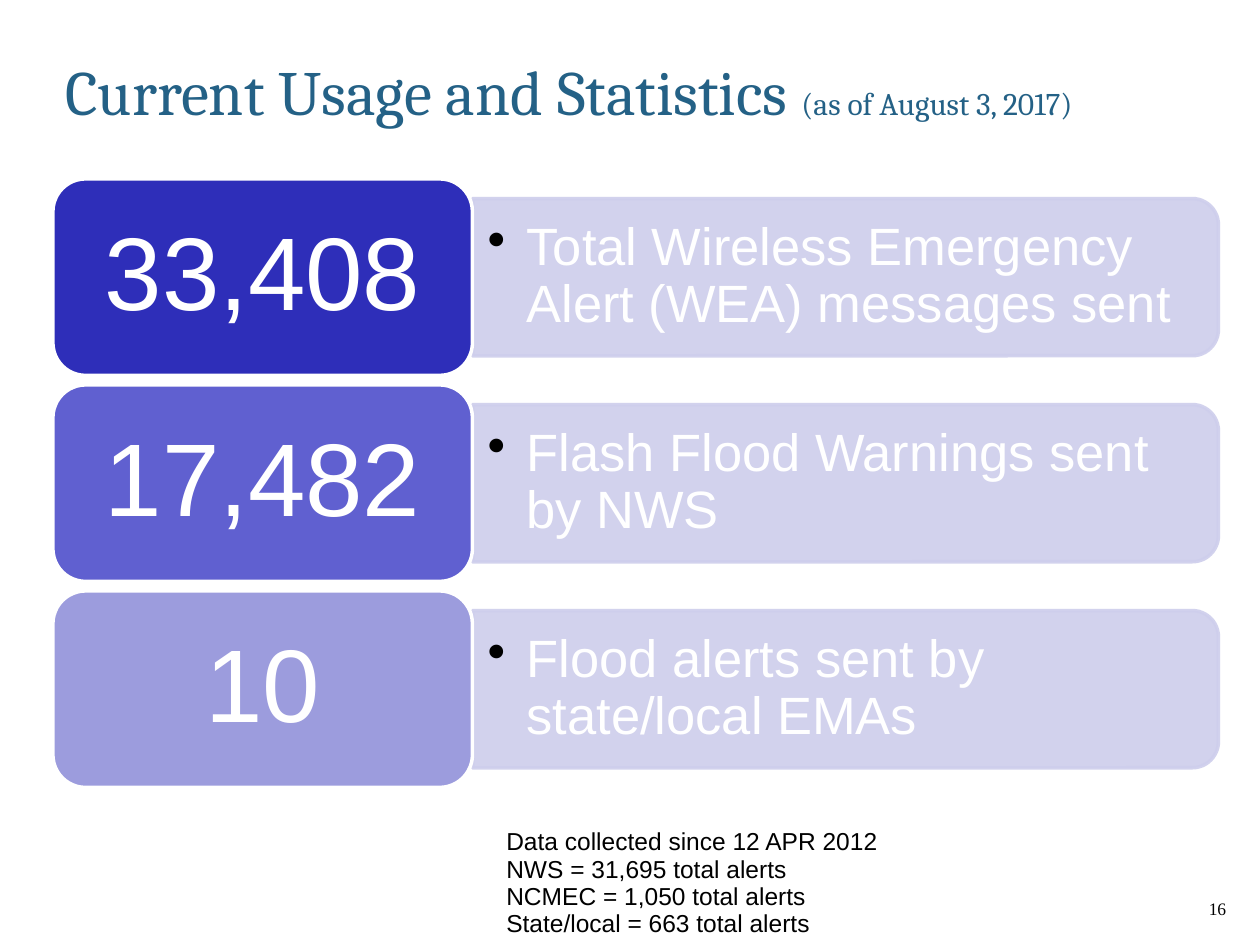
from lxml import etree
from pptx import Presentation
from pptx.dml.color import RGBColor
from pptx.enum import shapes, text
from pptx.oxml.ns import qn
from pptx.util import Inches, Pt

WHITE = RGBColor(0xFF, 0xFF, 0xFF)
BLACK = RGBColor(0, 0, 0)
TITLE_BLUE = RGBColor(0x24, 0x61, 0x86)
PALE_LILAC = RGBColor(0xCE, 0xCE, 0xEC)
STATISTICS = [
    ("33,408", "Total Wireless Emergency Alert (WEA) messages sent",
     RGBColor(0x2E, 0x2E, 0xB9)),
    ("17,482", "Flash Flood Warnings sent by NWS", RGBColor(0x60, 0x60, 0xD0)),
    ("10", "Flood alerts sent by state/local EMAs", RGBColor(0x9C, 0x9C, 0xDD)),
]
SOURCE_LINES = [
    "Data collected since 12 APR 2012",
    "NWS = 31,695 total alerts",
    "NCMEC = 1,050 total alerts",
    "State/local = 663 total alerts",
]


def style(run, size, color, face="Arial"):
    run.font.size = Pt(size)
    run.font.name = face
    run.font.color.rgb = color


def set_frame(frame, side, edge, anchor=text.MSO_ANCHOR.MIDDLE):
    frame.word_wrap = True
    frame.vertical_anchor = anchor
    frame.margin_left = frame.margin_right = Inches(side)
    frame.margin_top = frame.margin_bottom = Inches(edge)


def add_panel(slide, preset, box, fill):
    panel = slide.shapes.add_shape(preset, *box)
    panel.shadow.inherit = False
    panel.fill.solid()
    panel.fill.fore_color.rgb = fill
    panel.line.width = Pt(2)
    return panel


def add_bullet(paragraph, indent):
    props = paragraph._p.get_or_add_pPr()
    props.set("marL", str(indent))
    props.set("indent", str(-indent))
    color = etree.SubElement(props, qn("a:buClr"))
    etree.SubElement(color, qn("a:srgbClr"), val=str(BLACK))
    etree.SubElement(props, qn("a:buChar"), char="•")


def add_title(slide, left, top, width, height):
    title = slide.shapes.title
    title.left, title.top, title.width, title.height = left, top, width, height
    frame = title.text_frame
    set_frame(frame, 0.1, 0.05)
    frame.auto_size = text.MSO_AUTO_SIZE.NONE
    heading = frame.paragraphs[0]
    heading.alignment = text.PP_ALIGN.LEFT
    heading.line_spacing = 0.95
    for words, size in (("Current Usage and Statistics ", 36),
                        ("(as of August 3, 2017)", 18)):
        run = heading.add_run()
        run.text = words
        style(run, size, TITLE_BLUE, "Cambria")


def add_statistic(slide, left, top, width, height, number, meaning, color):
    number_width = Inches(3.33)
    bar_left, bar_width = left + number_width, width - number_width
    bar_height = int(height * 0.8)
    middle = top + height // 2

    # Bar with rounded right end: an upright shape turned a quarter
    upright = (bar_left + (bar_width - bar_height) // 2, middle - bar_width // 2,
               bar_height, bar_width)
    bar = add_panel(slide, shapes.MSO_SHAPE.ROUND_2_SAME_RECTANGLE, upright, PALE_LILAC)
    bar.rotation = 90
    bar.line.color.rgb = PALE_LILAC
    for tint in bar._element.spPr.iter(qn("a:srgbClr")):
        etree.SubElement(tint, qn("a:alpha"), val="90000")

    # Meaning, laid level over the bar
    label_height = Inches(1.12)
    label = slide.shapes.add_textbox(bar_left, middle - label_height // 2,
                                     bar_width - Inches(0.06), label_height)
    set_frame(label.text_frame, 0.12, 0.06)
    line = label.text_frame.paragraphs[0]
    line.text = meaning
    line.level = 1
    line.line_spacing = 0.9
    add_bullet(line, Inches(0.31))
    style(line.runs[0], 30, WHITE)

    # Number
    badge = add_panel(slide, shapes.MSO_SHAPE.ROUNDED_RECTANGLE,
                      (left, top, number_width, height), color)
    badge.line.color.rgb = WHITE
    set_frame(badge.text_frame, 0.25, 0.12)
    figure = badge.text_frame.paragraphs[0]
    figure.text = number
    figure.alignment = text.PP_ALIGN.CENTER
    figure.line_spacing = 0.9
    style(figure.runs[0], 59, WHITE)


def add_statistics(slide, left, top, width, height):
    row_height = Inches(1.56)
    pitch = (height - row_height) // (len(STATISTICS) - 1)
    for index, statistic in enumerate(STATISTICS):
        add_statistic(slide, left, top + index * pitch, width, row_height, *statistic)


def add_sources(slide, left, top, width, height):
    sources = slide.shapes.add_textbox(left, top, width, height)
    sources.fill.solid()
    sources.fill.fore_color.rgb = WHITE
    frame = sources.text_frame
    set_frame(frame, 0.1, 0.05, text.MSO_ANCHOR.TOP)
    frame.text = "\n".join(SOURCE_LINES)
    for line in frame.paragraphs:
        line.line_spacing = 0.93
        style(line.runs[0], 14, BLACK)


def add_page_number(slide, left, top, width, height):
    page = slide.shapes.add_textbox(left, top, width, height)
    set_frame(page.text_frame, 0.1, 0.05, text.MSO_ANCHOR.TOP)
    number = page.text_frame.paragraphs[0]
    number.text = "16"
    number.alignment = text.PP_ALIGN.RIGHT
    style(number.runs[0], 10, BLACK, "Times New Roman")


def main():
    deck = Presentation()
    deck.slide_width, deck.slide_height = Inches(10), Inches(7.5)
    slide = deck.slides.add_slide(deck.slide_layouts[5])
    add_title(slide, Inches(0.42), Inches(0.33), Inches(9.25), Inches(0.83))
    add_statistics(slide, Inches(0.42), Inches(1.42), Inches(9.25), Inches(4.83))
    add_page_number(slide, Inches(8.33), Inches(7.08), Inches(1.5), Inches(0.33))
    add_sources(slide, Inches(3.92), Inches(6.53), Inches(3.16), Inches(0.98))
    deck.save("out.pptx")


if __name__ == "__main__":
    main()
